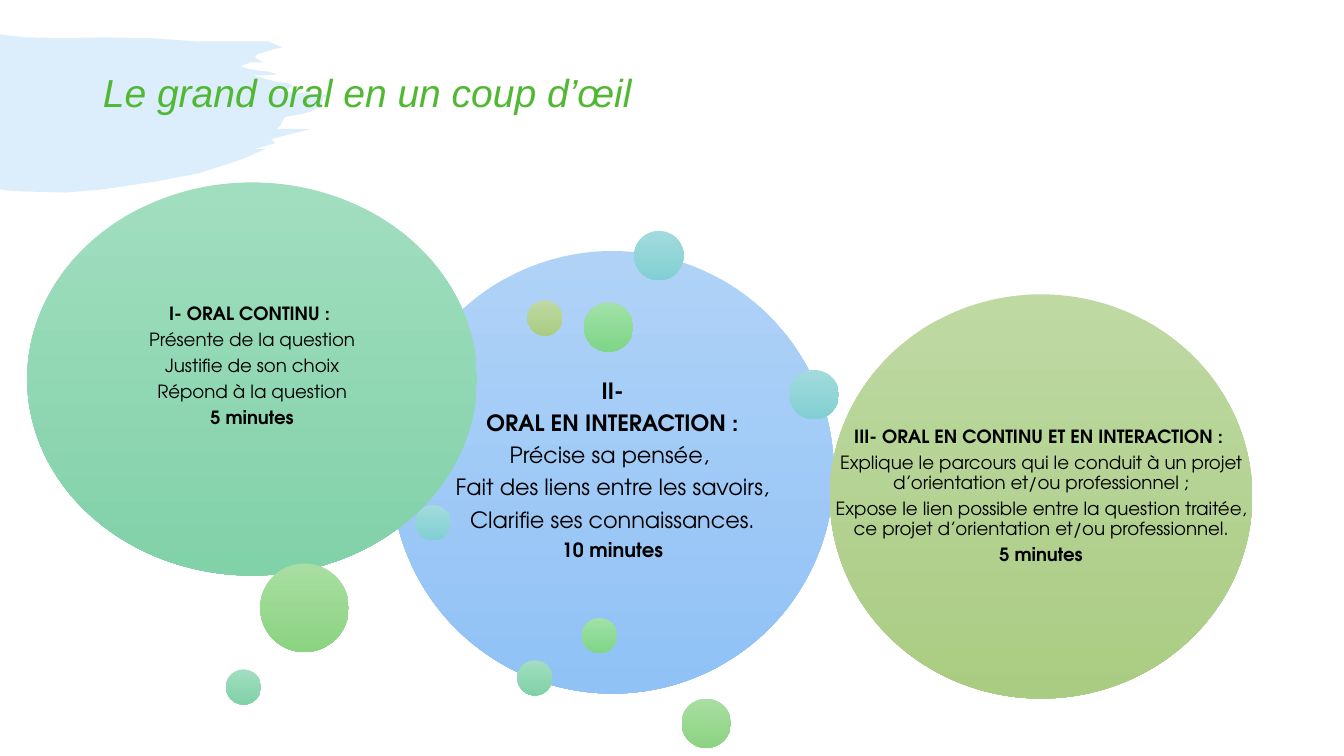
from pptx import Presentation
from pptx.dml.color import RGBColor
from pptx.enum.shapes import MSO_SHAPE
from pptx.enum.text import MSO_ANCHOR, PP_ALIGN
from pptx.oxml.ns import qn
from pptx.util import Inches, Pt
from lxml.etree import SubElement

FONT = "TeX Gyre Adventor"
MINT = ("A1DEBF", "81D1A9")
BLUE = ("B0D2F7", "90C2F6")
OLIVE = ("BFD9A3", "AACC82")
AQUA = ("A2DBDD", "81CFD3")
GREEN = ("A0E1A7", "7FD588")
LIME = ("A9DEA2", "8BD381")
SMALL, MEDIUM, LARGE = 0.35, 0.49, 0.88

BRUSH = [
    (0, 0.34), (0.06, 0.35), (0.25, 0.37), (0.66, 0.38), (1.02, 0.37),
    (1.51, 0.38), (1.94, 0.41), (2.48, 0.41), (2.66, 0.41), (2.8, 0.47),
    (2.71, 0.49), (2.55, 0.54), (2.53, 0.57), (2.56, 0.59), (2.62, 0.62),
    (2.48, 0.62), (2.38, 0.66), (2.46, 0.68), (2.56, 0.7), (2.66, 0.71),
    (2.75, 0.74), (2.51, 0.75), (2.63, 0.78), (2.73, 0.81), (2.8, 0.82),
    (2.88, 0.83), (2.9, 0.85), (2.87, 0.88), (2.84, 0.88), (2.63, 0.88),
    (2.9, 0.92), (3.3, 0.94), (3.21, 0.97), (3.18, 1.06), (3.07, 1.11),
    (3, 1.13), (2.83, 1.16), (2.8, 1.2), (2.78, 1.25), (2.74, 1.28),
    (3.08, 1.28), (2.69, 1.38), (2.73, 1.42), (2.52, 1.48), (2.63, 1.48),
    (2.4, 1.58), (1.97, 1.72), (1.55, 1.8), (1.02, 1.88), (0.65, 1.91),
    (0.23, 1.9), (0.07, 1.89), (0, 1.88),
]

STAGES = [
    (BLUE, (3.88, 2.49, 4.39, 4.39), 0.07, [
        ("II-", 16, True),
        ("ORAL EN INTERACTION :", 16, True),
        ("Précise sa pensée, ", 16, False),
        ("Fait des liens entre les savoirs,", 16, False),
        ("Clarifie ses connaissances.", 16, False),
        ("10 minutes", 14, True),
    ]),
    (MINT, (0.27, 1.81, 4.46, 3.9), 0.3, [
        ("I- ORAL CONTINU : ", 13, True),
        ("Présente de la question", 13, False),
        ("Justifie de son choix", 13, False),
        ("Répond à la question", 13, False),
        ("5 minutes", 13, True),
    ]),
    (OLIVE, (8.23, 2.92, 4.19, 4.01), 0.05, [
        ("III- ORAL EN CONTINU ET EN INTERACTION : ", 13, True),
        ("Explique le parcours qui le conduit à un projet "
         "d’orientation et/ou professionnel ;", 13, False),
        ("Expose le lien possible entre la question traitée, "
         "ce projet d’orientation et/ou professionnel.", 13, False),
        ("5 minutes", 13, True),
    ]),
]

BUBBLES = [
    (AQUA, 6.29, 2.29, MEDIUM),
    (MINT, 5.13, 6.55, SMALL),
    (LIME, 6.76, 6.93, MEDIUM),
    (OLIVE, 5.23, 2.98, SMALL),
    (AQUA, 4.12, 5.01, SMALL),
    (GREEN, 5.79, 3, MEDIUM),
    (LIME, 2.58, 5.59, LARGE),
    (AQUA, 7.83, 3.67, MEDIUM),
    (MINT, 2.24, 6.64, SMALL),
    (GREEN, 5.77, 6.13, SMALL),
]


def tint(color, value):
    color.rgb = RGBColor.from_string(value)


def write(para, text, size=13, font=FONT, color="000000", bold=False,
          italic=False, align=PP_ALIGN.CENTER, after=0.35):
    para.alignment = align
    para.line_spacing = 0.9
    para.space_before = Pt(0)
    para.space_after = Pt(size * after)
    run = para.add_run()
    run.text = text
    run.font.name = font
    run.font.size = Pt(size)
    run.font.bold = bold
    run.font.italic = italic
    tint(run.font.color, color)


def add_brush(slide):
    start, *rest = [(Inches(x), Inches(y)) for x, y in BRUSH]
    form = slide.shapes.build_freeform(*start)
    form.add_line_segments(rest, close=True)
    brush = form.convert_to_shape()
    brush.shadow.inherit = False
    brush.line.fill.background()
    brush.fill.solid()
    tint(brush.fill.fore_color, "54A8EC")
    paint = brush.fill._xPr.find(qn("a:solidFill"))[0]
    SubElement(paint, qn("a:alpha")).set("val", "20000")
    slide.shapes._spTree.insert(2, brush._element)


def add_title(slide, text):
    title = slide.shapes.title
    title.left, title.top = Inches(0.92), Inches(0.4)
    title.width, title.height = Inches(11.5), Inches(1.08)
    frame = title.text_frame
    frame.vertical_anchor = MSO_ANCHOR.MIDDLE
    write(frame.paragraphs[0], text, size=27.9, font="Arial",
          color="51B834", italic=True, align=PP_ALIGN.LEFT, after=0)


def add_disc(slide, shades, left, top, width, height):
    disc = slide.shapes.add_shape(
        MSO_SHAPE.OVAL, Inches(left), Inches(top), Inches(width), Inches(height))
    disc.shadow.inherit = False
    disc.line.fill.background()
    disc.fill.gradient()
    disc.fill.gradient_angle = 270
    for stop, shade in zip(disc.fill.gradient_stops, shades):
        tint(stop.color, shade)


def add_text(slide, place, foot, lines):
    frame = slide.shapes.add_textbox(*map(Inches, place)).text_frame
    frame.word_wrap = True
    frame.vertical_anchor = MSO_ANCHOR.MIDDLE
    frame.margin_left = frame.margin_right = frame.margin_top = Inches(0.05)
    frame.margin_bottom = Inches(foot)
    for index, (text, size, bold) in enumerate(lines):
        para = frame.add_paragraph() if index else frame.paragraphs[0]
        write(para, text, size=size, bold=bold)


def main():
    deck = Presentation()
    deck.slide_width, deck.slide_height = Inches(13.33), Inches(7.5)
    slide = deck.slides.add_slide(deck.slide_layouts[5])
    add_brush(slide)
    add_title(slide, "Le grand oral en un coup d’œil")
    for shades, place, foot, lines in STAGES:
        add_disc(slide, shades, *place)
        add_text(slide, place, foot, lines)
    for shades, left, top, size in BUBBLES:
        add_disc(slide, shades, left, top, size, size)
    deck.save("out.pptx")


if __name__ == "__main__":
    main()
